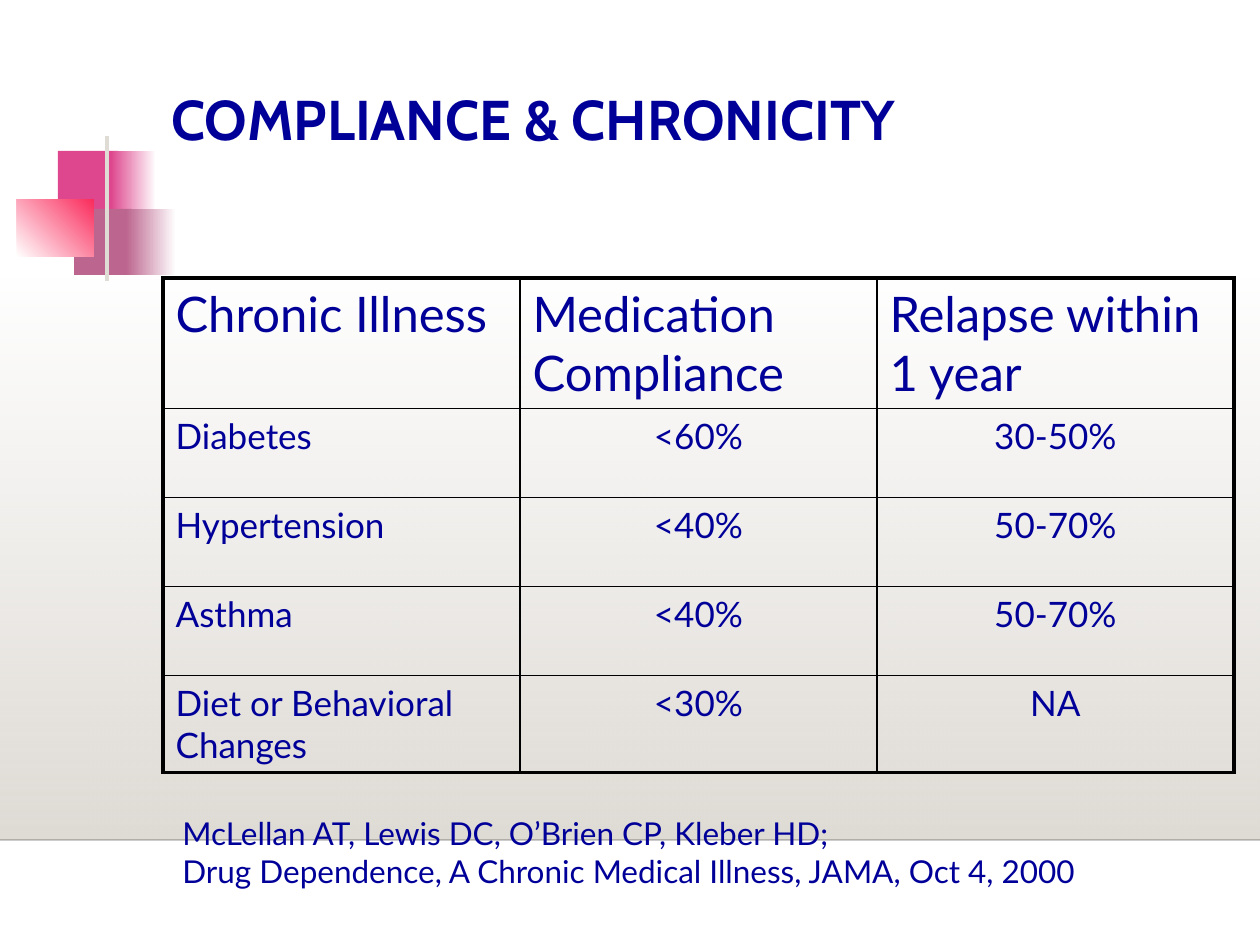
from dataclasses import dataclass
from typing import Optional

from pptx import Presentation
from pptx.dml.color import RGBColor
from pptx.enum.shapes import MSO_CONNECTOR as Connector, MSO_SHAPE as Preset
from pptx.enum.text import MSO_ANCHOR as Anchor, PP_ALIGN as Align
from pptx.oxml.ns import qn
from pptx.util import Emu, Pt
from lxml.etree import SubElement

PX_PER_INCH = 126
NAVY, BLACK, SAND, WHITE = "000099", "000000", "DFDBD5", "FFFFFF"
PINK, MAUVE, RED = "DE478E", "BC658E", "FA2B5C"
THICK, THIN = 2.25, 1


@dataclass
class Block:
    left: int
    top: int
    width: int
    height: int
    color: str
    fade_to: Optional[str] = None
    angle: int = 0  # counter-clockwise
    start_alpha: int = 100


BLOCKS = [
    Block(58, 151, 60, 66, PINK),
    Block(111, 151, 45, 66, PINK, WHITE),
    Block(74, 209, 58, 66, MAUVE),
    Block(126, 209, 50, 66, MAUVE, WHITE),
    Block(17, 199, 77, 58, WHITE, RED, 45),
    Block(105, 136, 4, 145, SAND),
]
HEADER = ["Chronic Illness", "Medication\vCompliance", "Relapse within 1 year"]
ILLNESSES = [
    ["Diabetes", "<60%", "30-50%"],
    ["Hypertension", "<40%", "50-70%"],
    ["Asthma", "<40%", "50-70%"],
    ["Diet or Behavioral Changes", "<30%", "NA"],
]
ROW_HEIGHTS = [130, 89, 89, 89, 97]
COLUMN_WIDTH = 357


def px(value: int) -> Emu:
    return Emu(round(value * 914400 / PX_PER_INCH))


def rgb(color: str) -> RGBColor:
    return RGBColor.from_string(color)


def set_alpha(color_element, percent: int) -> None:
    SubElement(color_element, qn("a:alpha")).set("val", str(percent * 1000))


def write(frame, text: str, *, size: int, font: str = "Lato", bold: bool = False,
          align=Align.LEFT, spacing: Optional[float] = None) -> None:
    frame.word_wrap = True
    para = frame.paragraphs[0]
    para.text = text
    para.alignment = align
    para.line_spacing = spacing
    for span in para.runs:
        span.font.name = font
        span.font.size = Pt(size)
        span.font.bold = bold
        span.font.color.rgb = rgb(NAVY)


def add_text(page, left: int, top: int, width: int, height: int, text: str, **style) -> None:
    box = page.shapes.add_textbox(px(left), px(top), px(width), px(height))
    box.text_frame.vertical_anchor = Anchor.TOP
    write(box.text_frame, text, **style)


def add_block(page, block: Block) -> None:
    shape = page.shapes.add_shape(Preset.RECTANGLE, px(block.left), px(block.top),
                                  px(block.width), px(block.height))
    shape.shadow.inherit = False
    shape.line.fill.background()
    if block.fade_to is None:
        shape.fill.solid()
        shape.fill.fore_color.rgb = rgb(block.color)
        return
    shape.fill.gradient()
    shape.fill.gradient_angle = block.angle
    for stop, color in zip(shape.fill.gradient_stops, (block.color, block.fade_to)):
        stop.color.rgb = rgb(color)
    if block.start_alpha < 100:
        set_alpha(next(shape._element.iter(qn("a:srgbClr"))), block.start_alpha)


def add_floor_line(page, y: int) -> None:
    line = page.shapes.add_connector(Connector.STRAIGHT, 0, px(y), px(1260), px(y))
    line.line.width = Pt(1)
    line.line.color.rgb = rgb("000001")
    set_alpha(next(line._element.iter(qn("a:srgbClr"))), 20)
    SubElement(line._element.spPr, qn("a:effectLst"))


def set_borders(cell, widths: dict[str, float]) -> None:
    properties = cell._tc.get_or_add_tcPr()
    for position, (side, width) in enumerate(widths.items()):
        edge = properties.makeelement(qn(f"a:ln{side}"), {"w": str(Pt(width))})
        fill = SubElement(edge, qn("a:solidFill"))
        SubElement(fill, qn("a:srgbClr")).set("val", BLACK)
        properties.insert(position, edge)


def add_illness_table(page, left: int, top: int) -> None:
    rows = [HEADER, *ILLNESSES]
    last_row, last_column = len(rows) - 1, len(HEADER) - 1
    table = page.shapes.add_table(len(rows), len(HEADER), px(left), px(top),
                                  px(COLUMN_WIDTH * len(HEADER)), px(sum(ROW_HEIGHTS))).table
    table.first_row = table.horz_banding = False
    for column in table.columns:
        column.width = px(COLUMN_WIDTH)
    for r, texts in enumerate(rows):
        table.rows[r].height = px(ROW_HEIGHTS[r])
        for c, text in enumerate(texts):
            cell = table.cell(r, c)
            cell.fill.background()
            write(cell.text_frame, text, size=20 if r else 28,
                  align=Align.CENTER if r and c else Align.LEFT)
            # Thick frame outside, thin rules inside
            set_borders(cell, {
                "L": THICK if c == 0 else THIN,
                "R": THICK if c == last_column else THIN,
                "T": THICK if r == 0 else THIN,
                "B": THICK if r == last_row else THIN,
            })


def main() -> None:
    deck = Presentation()
    deck.slide_width, deck.slide_height = px(1260), px(945)
    page = deck.slides.add_slide(deck.slide_layouts[6])

    # Background and ornament
    add_block(page, Block(0, 277, 1260, 563, SAND, SAND, 270, start_alpha=0))
    add_floor_line(page, 840)
    for block in BLOCKS:
        add_block(page, block)

    # Title, table and citation
    add_text(page, 159, 86, 1073, 157, "COMPLIANCE & CHRONICITY",
             size=32, font="Cabin", bold=True, spacing=0.9)
    add_illness_table(page, 163, 278)
    add_text(page, 170, 808, 958, 88,
             "McLellan AT, Lewis DC, O’Brien CP, Kleber HD;\v"
             "Drug Dependence, A Chronic Medical Illness, JAMA, Oct 4, 2000", size=18)
    deck.save("out.pptx")


if __name__ == "__main__":
    main()
